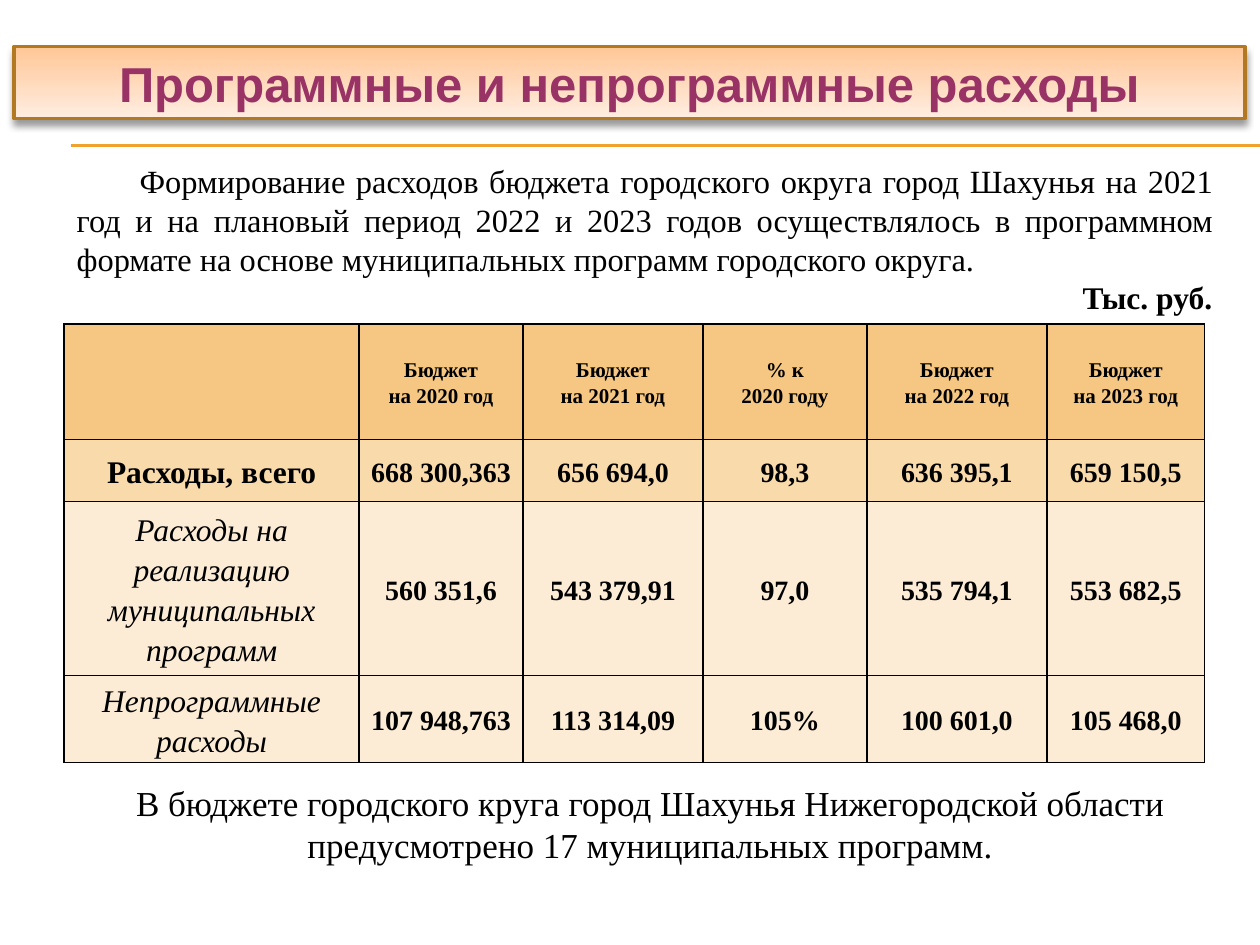
from lxml.etree import SubElement
from pptx import Presentation
from pptx.dml.color import RGBColor
from pptx.enum.text import MSO_ANCHOR, PP_ALIGN
from pptx.oxml.ns import qn
from pptx.util import Inches, Pt

COLORS = {
    "text": "000000", "title": "993366", "frame": "B27822", "rule": "F0A22E",
    "title_top": "FFC798", "title_bottom": "FFEDE0",
    "header": "F6C782", "total": "F9DAAB", "detail": "FCECD5",
}
COLUMN_WIDTHS = [2.34, 1.3, 1.43, 1.3, 1.43, 1.25]
HEADER = [[], ["Бюджет", "на 2020 год"], ["Бюджет", "на 2021 год"], ["% к", "2020 году"],
          ["Бюджет", "на 2022 год"], ["Бюджет", "на 2023 год"]]
ROWS = [
    ("Расходы, всего", 0.49, "total",
     ["668 300,363", "656 694,0", "98,3", "636 395,1", "659 150,5"]),
    ("Расходы на реализацию муниципальных программ", 1.38, "detail",
     ["560 351,6", "543 379,91", "97,0", "535 794,1", "553 682,5"]),
    ("Непрограммные расходы", 0.69, "detail",
     ["107 948,763", "113 314,09", "105%", "100 601,0", "105 468,0"]),
]


def color(name):
    return RGBColor.from_string(COLORS[name])


class BudgetSlide:
    font = "Times New Roman"

    def __init__(self, deck):
        self.page = deck.slides.add_slide(deck.slide_layouts[5])

    def add_span(self, paragraph, text, size, bold=False, italic=False, ink="text", font=None,
                 align=PP_ALIGN.CENTER, spacing=None, indent=0):
        paragraph.alignment = align
        paragraph.line_spacing = spacing
        if indent:
            paragraph._p.get_or_add_pPr().set("indent", str(Inches(indent)))
        span = paragraph.add_run()
        span.text = text
        span.font.name = font or self.font
        span.font.size = Pt(size)
        span.font.bold = bold
        span.font.italic = italic
        span.font.color.rgb = color(ink)

    def title(self, text, left, top, width, height):
        box = self.page.shapes.title
        box.left, box.top, box.width, box.height = map(Inches, (left, top, width, height))
        box.fill.gradient()
        box.fill.gradient_angle = 270
        for stop, name in zip(box.fill.gradient_stops, ("title_top", "title_bottom")):
            stop.color.rgb = color(name)
        box.line.color.rgb = color("frame")
        box.line.width = Pt(2)
        effects = SubElement(box._element.spPr, qn("a:effectLst"))
        shadow = SubElement(effects, qn("a:outerShdw"), blurRad=str(Pt(4)), dist=str(Pt(3)),
                            dir="5400000", rotWithShape="0")
        black = SubElement(shadow, qn("a:srgbClr"), val=COLORS["text"])
        SubElement(black, qn("a:alpha"), val="40000")
        box.text_frame.vertical_anchor = MSO_ANCHOR.MIDDLE
        self.add_span(box.text_frame.paragraphs[0], text, 28, bold=True, ink="title",
                      font="Arial")

    def rule(self, left, right, top):
        line = self.page.shapes.add_connector(1, Inches(left), Inches(top),
                                              Inches(right), Inches(top))
        line.line.color.rgb = color("rule")
        line.line.width = Pt(0.75)
        SubElement(line._element.spPr, qn("a:effectLst"))

    def text(self, left, top, width, height):
        box = self.page.shapes.add_textbox(*map(Inches, (left, top, width, height)))
        box.text_frame.word_wrap = True
        return box.text_frame

    def cell(self, cell, lines, fill, **style):
        cell.fill.solid()
        cell.fill.fore_color.rgb = color(fill)
        cell.vertical_anchor = MSO_ANCHOR.MIDDLE
        cell.margin_left = cell.margin_right = Inches(0.07)
        cell.margin_top = cell.margin_bottom = 0
        for index, line in enumerate(lines):
            frame = cell.text_frame
            paragraph = frame.add_paragraph() if index else frame.paragraphs[0]
            self.add_span(paragraph, line, spacing=1.15, **style)
        properties = cell._tc.get_or_add_tcPr()
        for index, side in enumerate(("lnL", "lnR", "lnT", "lnB")):
            border = properties.makeelement(qn("a:" + side), {"w": str(Pt(1))})
            fill_element = SubElement(border, qn("a:solidFill"))
            SubElement(fill_element, qn("a:srgbClr"), val=COLORS["text"])
            properties.insert(index, border)

    def table(self, left, top, header_height):
        heights = [header_height] + [row[1] for row in ROWS]
        grid = self.page.shapes.add_table(
            len(heights), len(COLUMN_WIDTHS), Inches(left), Inches(top),
            Inches(sum(COLUMN_WIDTHS)), Inches(sum(heights))).table
        for column, width in zip(grid.columns, COLUMN_WIDTHS):
            column.width = Inches(width)
        for row, height in zip(grid.rows, heights):
            row.height = Inches(height)
        for index, lines in enumerate(HEADER):
            self.cell(grid.cell(0, index), lines, "header", size=12, bold=True)
        for number, (label, _, fill, values) in enumerate(ROWS, 1):
            total = fill == "total"
            self.cell(grid.cell(number, 0), [label], fill, size=18, bold=total, italic=not total)
            for index, value in enumerate(values, 1):
                self.cell(grid.cell(number, index), [value], fill, size=16, bold=True)


def main():
    deck = Presentation()
    deck.slide_width, deck.slide_height = Inches(10), Inches(7.5)
    slide = BudgetSlide(deck)
    for top in (1.15, 1.16):
        slide.rule(0.56, 10, top)
    intro = slide.text(0.51, 1.23, 9.21, 1.64)
    slide.add_span(intro.paragraphs[0],
                   "Формирование расходов бюджета городского округа город Шахунья на 2021 год "
                   "и на плановый период 2022 и 2023 годов осуществлялось в программном формате "
                   "на основе муниципальных программ городского округа.",
                   18.5, align=PP_ALIGN.JUSTIFY, indent=0.5)
    slide.add_span(intro.add_paragraph(), "Тыс. руб.", 18, bold=True, align=PP_ALIGN.RIGHT)
    slide.table(0.51, 2.57, 0.92)
    slide.title("Программные и непрограммные расходы", 0.11, 0.37, 9.77, 0.57)
    footer = slide.text(0.75, 6.15, 8.82, 0.77)
    slide.add_span(footer.paragraphs[0],
                   "В бюджете городского круга город Шахунья Нижегородской области "
                   "предусмотрено 17 муниципальных программ.", 20)
    deck.save("out.pptx")


if __name__ == "__main__":
    main()
